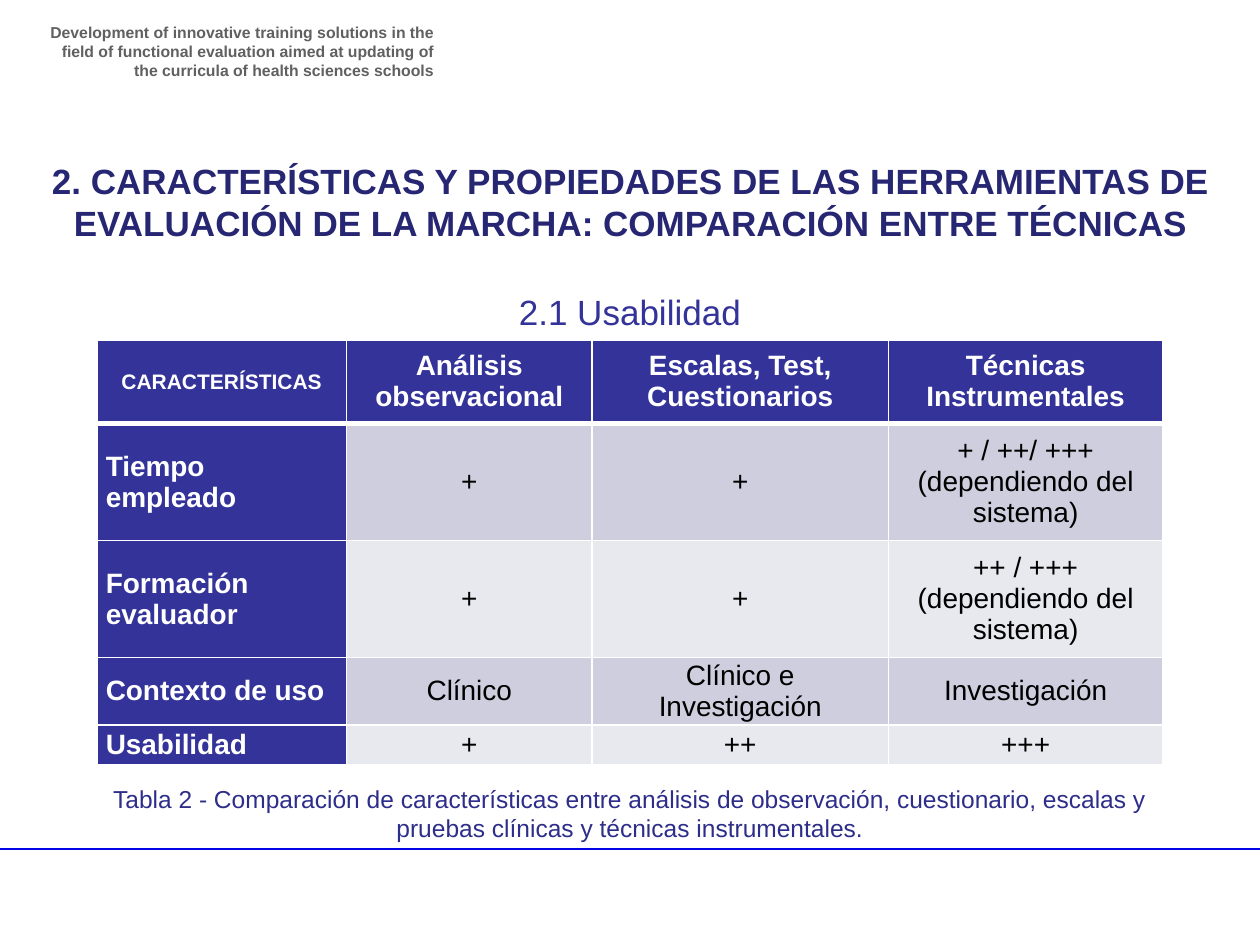
from lxml import etree
from pptx import Presentation
from pptx.dml.color import RGBColor
from pptx.enum.shapes import MSO_CONNECTOR
from pptx.enum.text import MSO_ANCHOR, PP_ALIGN
from pptx.oxml.ns import qn
from pptx.util import Inches, Pt

WHITE = RGBColor(0xFF, 0xFF, 0xFF)
BLACK = RGBColor(0x00, 0x00, 0x00)
GREY = RGBColor(0x60, 0x60, 0x60)
INDIGO = RGBColor(0x33, 0x33, 0x99)
TITLE_BLUE = RGBColor(0x26, 0x26, 0x73)
CAPTION_BLUE = RGBColor(0x2D, 0x2D, 0x8A)
RULE_BLUE = RGBColor(0x04, 0x04, 0xE6)
BANDS = [RGBColor(0xCE, 0xCE, 0xDE), RGBColor(0xE8, 0xE8, 0xEF)]

COL_WIDTHS = [1.98, 1.95, 2.35, 2.18]
ROW_HEIGHTS = [0.66, 0.93, 0.93, 0.5, 0.32]
ROWS = [
    ["CARACTERÍSTICAS", "Análisis observacional", "Escalas, Test, Cuestionarios",
     "Técnicas Instrumentales"],
    ["Tiempo empleado", "+", "+", "+ / ++/ +++ (dependiendo del sistema)"],
    ["Formación evaluador", "+", "+", "++ / +++ (dependiendo del sistema)"],
    ["Contexto de uso", "Clínico", "Clínico e Investigación", "Investigación"],
    ["Usabilidad", "+", "++", "+++"],
]


def format_text(tf, text, size, color, bold=False, align=PP_ALIGN.CENTER):
    tf.text = text
    p = tf.paragraphs[0]
    p.alignment = align
    font = p.runs[0].font
    font.name = "Arial"
    font.size = Pt(size)
    font.bold = bold
    font.color.rgb = color


def add_text(slide, box, text, size, color, **style):
    sp = slide.shapes.add_textbox(*[Inches(v) for v in box])
    sp.text_frame.word_wrap = True
    format_text(sp.text_frame, text, size, color, **style)


def add_rule(slide, left, right, y):
    line = slide.shapes.add_connector(
        MSO_CONNECTOR.STRAIGHT, Inches(left), Inches(y), Inches(right), Inches(y))
    line.line.color.rgb = RULE_BLUE
    line.line.width = Pt(1)
    etree.SubElement(line._element.spPr, qn("a:effectLst"))


def set_borders(cell, widths):
    """Draw white borders; widths maps a side (L, R, T, B) to points."""
    tcPr = cell._tc.get_or_add_tcPr()
    for i, (side, width) in enumerate(widths.items()):
        ln = etree.Element(qn(f"a:ln{side}"), w=str(Pt(width)))
        fill = etree.SubElement(ln, qn("a:solidFill"))
        etree.SubElement(fill, qn("a:srgbClr"), val=str(WHITE))
        tcPr.insert(i, ln)


def style_cell(cell, text, row, col):
    header = row == 0 or col == 0
    cell.margin_left = cell.margin_right = Inches(0.07)
    cell.margin_top = cell.margin_bottom = 0
    cell.vertical_anchor = MSO_ANCHOR.MIDDLE
    cell.fill.solid()
    cell.fill.fore_color.rgb = INDIGO if header else BANDS[(row - 1) % 2]
    format_text(cell.text_frame, text,
                size=12 if row == col == 0 else 16,
                color=WHITE if header else BLACK,
                bold=header,
                align=PP_ALIGN.JUSTIFY if row and col == 0 else PP_ALIGN.CENTER)
    set_borders(cell, {"L": 1, "R": 1,
                       "T": 3 if row == 1 else 1,
                       "B": 3 if row == 0 else 1})


def add_comparison_table(slide, left, top):
    frame = slide.shapes.add_table(
        len(ROWS), len(COL_WIDTHS), Inches(left), Inches(top),
        Inches(sum(COL_WIDTHS)), Inches(sum(ROW_HEIGHTS)))
    table = frame.table
    for column, width in zip(table.columns, COL_WIDTHS):
        column.width = Inches(width)
    for r, (texts, height) in enumerate(zip(ROWS, ROW_HEIGHTS)):
        table.rows[r].height = Inches(height)
        for c, text in enumerate(texts):
            style_cell(table.cell(r, c), text, r, c)


def build_slide(prs):
    slide = prs.slides.add_slide(prs.slide_layouts[6])
    add_rule(slide, -0.05, 10, 6.74)
    add_text(slide, (0.28, 0.13, 3.26, 0.47),
             "Development of innovative training solutions in the ﬁeld of functional "
             "evaluation aimed at updating of the curricula of health sciences schools",
             9, GREY, bold=True, align=PP_ALIGN.RIGHT)
    add_comparison_table(slide, 0.77, 2.7)
    add_text(slide, (0.71, 6.17, 8.58, 0.57),
             "Tabla 2 - Comparación de características entre análisis de observación, "
             "cuestionario, escalas y pruebas clínicas y técnicas instrumentales.",
             14, CAPTION_BLUE)
    add_text(slide, (0.28, 1.22, 9.45, 0.77),
             "2. CARACTERÍSTICAS Y PROPIEDADES DE LAS HERRAMIENTAS DE EVALUACIÓN DE "
             "LA MARCHA: COMPARACIÓN ENTRE TÉCNICAS",
             20, TITLE_BLUE, bold=True)
    add_text(slide, (3.85, 2.26, 2.3, 0.44), "2.1 Usabilidad", 20, INDIGO)


def main():
    prs = Presentation()
    prs.slide_width = Inches(10)
    prs.slide_height = Inches(7.5)
    build_slide(prs)
    prs.save("out.pptx")


if __name__ == "__main__":
    main()
